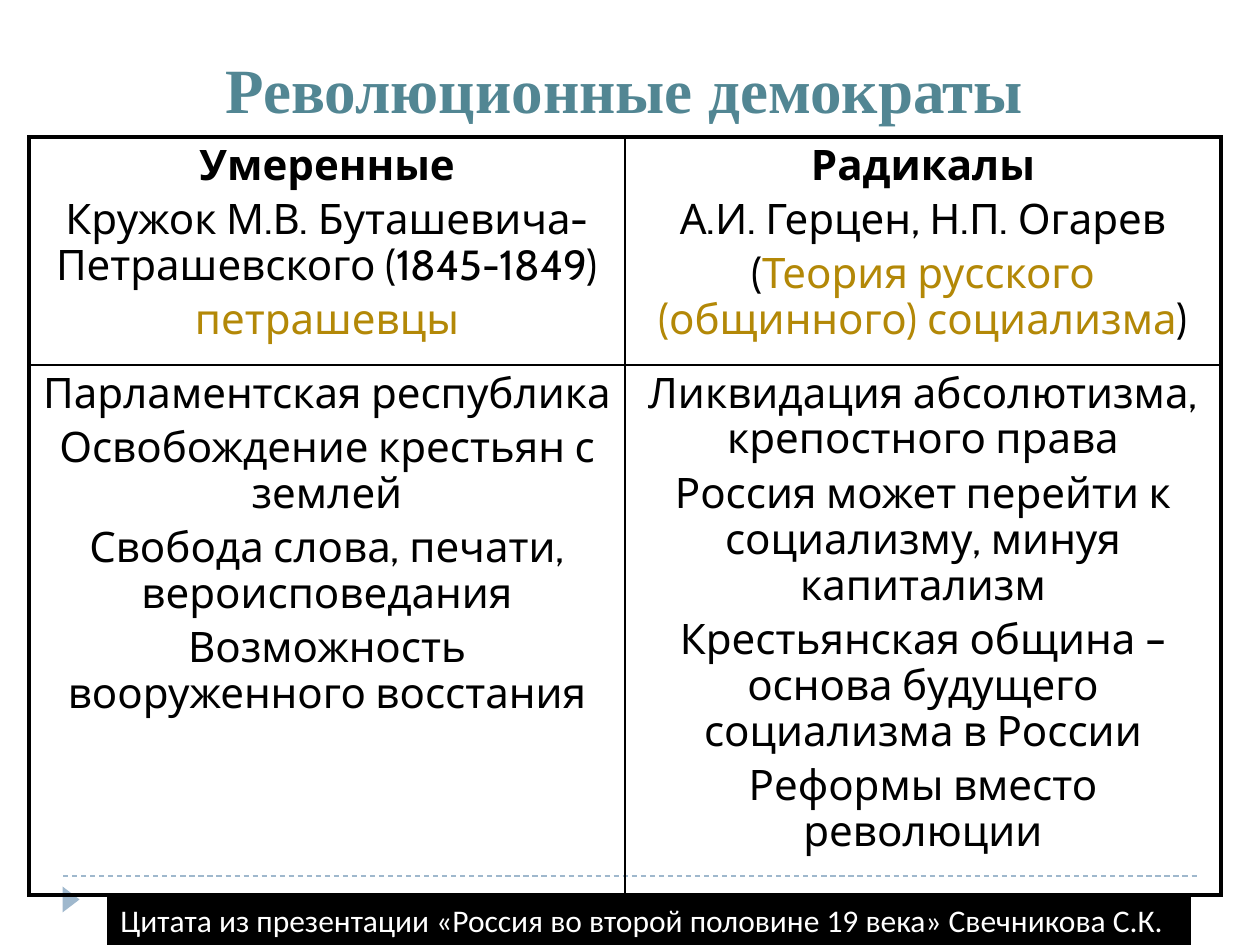
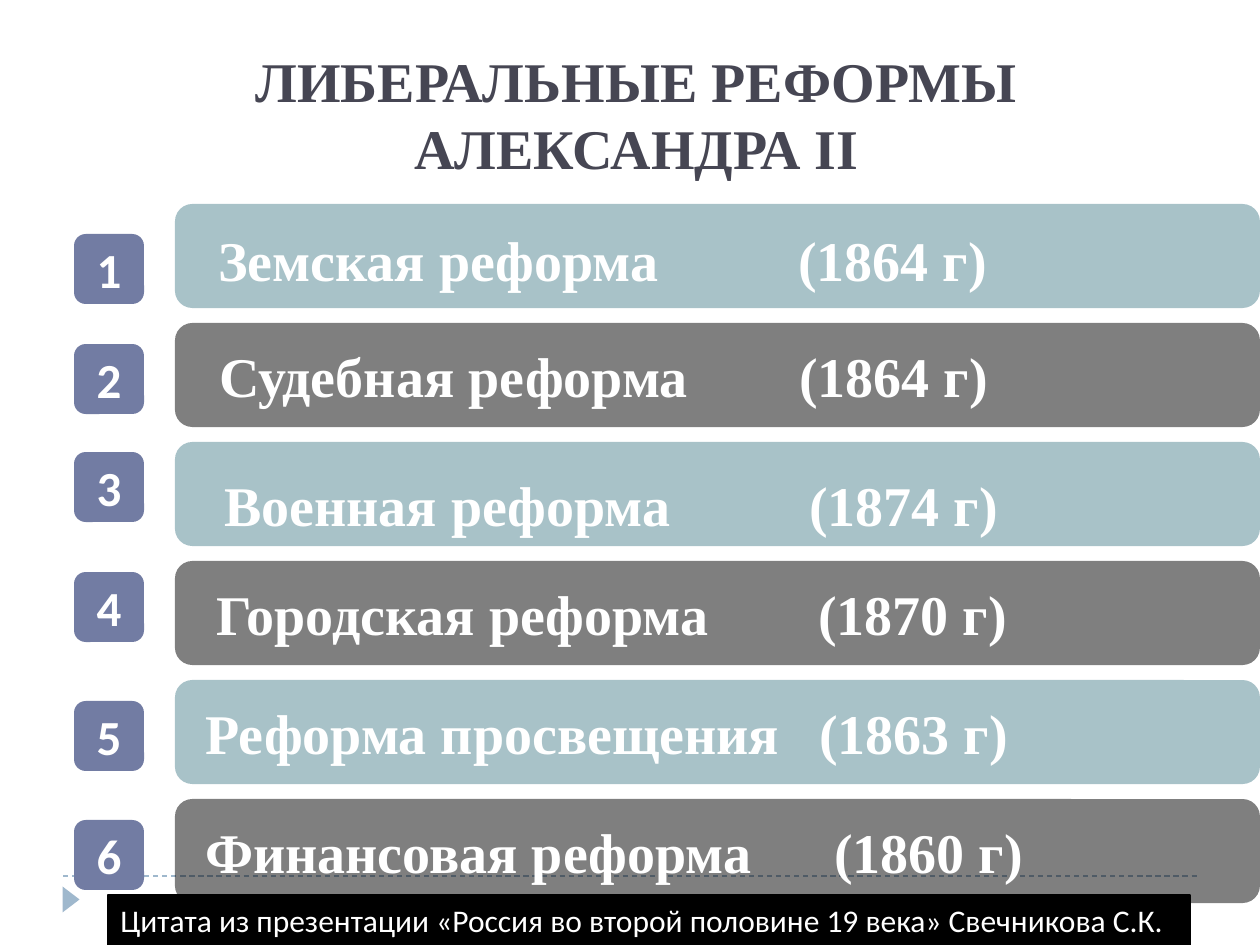
from lxml import etree
from pptx import Presentation
from pptx.dml.color import RGBColor
from pptx.enum.dml import MSO_LINE
from pptx.enum.shapes import MSO_CONNECTOR, MSO_SHAPE
from pptx.enum.text import MSO_ANCHOR, PP_ALIGN
from pptx.oxml.ns import qn
from pptx.util import Pt

LINE = MSO_CONNECTOR.STRAIGHT
DASH = MSO_LINE.DASH
RECT = MSO_SHAPE.RECTANGLE
ROUND = MSO_SHAPE.ROUNDED_RECTANGLE
TRIANGLE = MSO_SHAPE.ISOSCELES_TRIANGLE
TOP, MIDDLE = MSO_ANCHOR.TOP, MSO_ANCHOR.MIDDLE
LEFT, CENTER = PP_ALIGN.LEFT, PP_ALIGN.CENTER

COLORS = {
    "black": "000000", "white": "FFFFFF", "teal": "528693", "slate": "464653",
    "gold": "B38807", "badge": "727CA3", "rule": "9FB8CD",
}
SERIF, SANS, BODY = "Times New Roman", "Calibri", "Cabin"
WIDE, HIGH = 1260, 945
CITE = "Цитата из презентации «Россия во второй половине 19 века» Свечникова С.К."

# Each cell is a list of paragraphs; each paragraph is a list of (text, style)
CELLS = [
    [
        [[("Умеренные", "bold")],
         [("Кружок М.В. Буташевича-Петрашевского (1845-1849)", "")],
         [("петрашевцы", "gold")]],
        [[("Радикалы", "bold")],
         [("А.И. Герцен, Н.П. Огарев", "")],
         [("(", ""), ("Теория русского (общинного) социализма", "gold"), (")", "")]],
    ],
    [
        [[("Парламентская республика", "")],
         [("Освобождение крестьян с землей", "")],
         [("Свобода слова, печати, вероисповедания", "")],
         [("Возможность вооруженного восстания", "")]],
        [[("Ликвидация абсолютизма, крепостного права", "")],
         [("Россия может перейти к социализму, минуя капитализм", "")],
         [("Крестьянская община – основа будущего социализма в России", "")],
         [("Реформы вместо революции", "")]],
    ],
]

# Name, date, left of name, left of date, top of badge, drop of text
REFORMS = [
    ("Земская реформа", "(1864 г)", 218, 798, 234, 3),
    ("Судебная реформа", "(1864 г)", 219, 799, 344, 0),
    ("Военная реформа", "(1874 г)", 224, 809, 452, 10),
    ("Городская реформа", "(1870 г)", 216, 818, 572, 0),
    ("Реформа просвещения", "(1863 г)", 205, 819, 701, 0),
    ("Финансовая реформа", "(1860 г)", 205, 834, 820, 0),
]


def px(n):
    return round(n * 914400 / 126)


def rgb(name):
    return RGBColor.from_string(COLORS[name])


def add_run(para, text, font, size, color, bold=False):
    run = para.add_run()
    run.text = text
    run.font.name, run.font.size, run.font.bold = font, Pt(size), bold
    run.font.color.rgb = rgb(color)


def add_block(slide, kind, box, color, alpha=None):
    shape = slide.shapes.add_shape(kind, *map(px, box))
    shape.shadow.inherit = False
    shape.fill.solid()
    shape.fill.fore_color.rgb = rgb(color)
    shape.line.fill.background()
    if alpha:
        tint = shape._element.spPr.find(".//" + qn("a:srgbClr"))
        etree.SubElement(tint, qn("a:alpha")).set("val", str(alpha * 1000))
    return shape


def set_frame(shape, anchor, align):
    frame = shape.text_frame
    frame.word_wrap = True
    frame.vertical_anchor = anchor
    para = frame.paragraphs[0]
    para.alignment = align
    return frame, para


def add_title(slide, box, text, size, color):
    title = slide.shapes.add_textbox(*map(px, box))
    _, para = set_frame(title, MIDDLE, CENTER)
    add_run(para, text, SERIF, size, color, True)


def add_rule(slide):
    # Dashed rule and the small marker under it
    rule = slide.shapes.add_connector(LINE, px(63), px(876), px(1197), px(876))
    rule.line.color.rgb = rgb("rule")
    rule.line.width = Pt(0.75)
    rule.line.dash_style = DASH
    etree.SubElement(rule._element.spPr, qn("a:effectLst"))
    mark = add_block(slide, TRIANGLE, (58, 891, 26, 17), "rule")
    mark.rotation = 90


def add_cite(slide):
    band = add_block(slide, RECT, (108, 895, 1082, 50), "black")
    band.line.color.rgb = rgb("black")
    band.line.width = Pt(1.5)
    _, para = set_frame(band, TOP, LEFT)
    add_run(para, CITE, SANS, 18, "white")


def set_edges(cell, widths):
    props = cell._tc.get_or_add_tcPr()
    for spot, (side, width) in enumerate(zip("LRTB", widths)):
        edge = etree.Element(qn("a:ln" + side), w=str(Pt(width)))
        fill = etree.SubElement(edge, qn("a:solidFill"))
        etree.SubElement(fill, qn("a:srgbClr"), val=COLORS["black"])
        props.insert(spot, edge)


def fill_cell(cell, paras):
    cell.fill.background()
    frame = cell.text_frame
    for i, runs in enumerate(paras):
        para = frame.add_paragraph() if i else frame.paragraphs[0]
        para.alignment = CENTER
        para.line_spacing = 0.9
        if i:
            para.space_before = Pt(4.8)
        for text, style in runs:
            color = "gold" if style == "gold" else "black"
            add_run(para, text, BODY, 24, color, style == "bold")


def add_grid(slide, box, heights):
    grid = slide.shapes.add_table(2, 2, *map(px, box)).table
    grid.first_row = grid.horz_banding = False
    for row, height in zip(grid.rows, heights):
        row.height = px(height)
    for r, line in enumerate(CELLS):
        for c, paras in enumerate(line):
            cell = grid.cell(r, c)
            fill_cell(cell, paras)
            # Thick outside, thin inside
            outer = (c == 0, c == 1, r == 0, r == 1)
            set_edges(cell, [2.25 if out else 1 for out in outer])


def add_bar(slide, top, color, name, date, left, stop, drop):
    start, pad = 175, 5
    bar = add_block(slide, ROUND, (start, top, WIDE - start, 104), color, 50)
    frame, para = set_frame(bar, MIDDLE, LEFT)
    frame.margin_left = px(left - start - pad)
    frame.margin_top, frame.margin_bottom = px(2 * drop), 0
    tabs = etree.SubElement(para._p.get_or_add_pPr(), qn("a:tabLst"))
    etree.SubElement(tabs, qn("a:tab"), pos=str(px(stop - left)), algn="l")
    add_run(para, name + "\t" + date, SERIF, 32, "white", True)


def add_badge(slide, top, num):
    badge = add_block(slide, ROUND, (74, top, 70, 70), "badge")
    frame, para = set_frame(badge, MIDDLE, CENTER)
    frame.word_wrap = False
    add_run(para, str(num), SANS, 28, "white", True)


def add_page(deck):
    slide = deck.slides.add_slide(deck.slide_layouts[6])
    add_rule(slide)
    return slide


def main():
    deck = Presentation()
    deck.slide_width, deck.slide_height = px(WIDE), px(HIGH)

    # Two wings of the democrats
    slide = add_page(deck)
    add_title(slide, (29, 46, 1191, 84), "Революционные демократы", 36, "teal")
    add_grid(slide, (29, 137, 1192, 758), (228, 530))
    add_cite(slide)

    # Numbered list of reforms
    slide = add_page(deck)
    add_title(slide, (113, 35, 1047, 157),
              "ЛИБЕРАЛЬНЫЕ РЕФОРМЫ АЛЕКСАНДРА II", 32, "slate")
    for i, (name, date, left, stop, high, drop) in enumerate(REFORMS):
        color = "black" if i % 2 else "teal"
        add_bar(slide, 204 + 119 * i, color, name, date, left, stop, drop)
        add_badge(slide, high, i + 1)
    add_cite(slide)

    deck.save("out.pptx")


if __name__ == "__main__":
    main()
